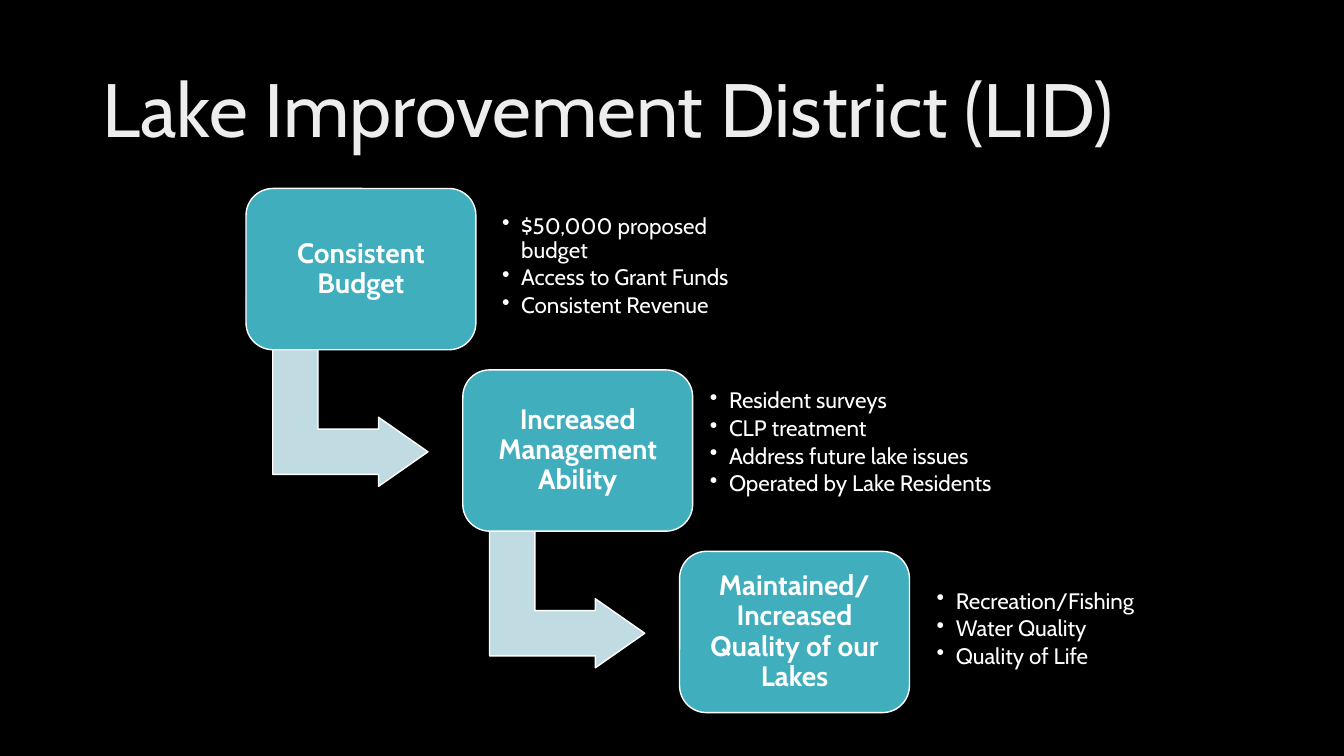
from pptx import Presentation
from pptx.dml.color import RGBColor
from pptx.enum.shapes import MSO_SHAPE
from pptx.enum.text import MSO_ANCHOR, PP_ALIGN
from pptx.oxml.ns import qn
from pptx.util import Inches, Pt
from lxml import etree

ROUNDED = MSO_SHAPE.ROUNDED_RECTANGLE
BENT_ARROW = MSO_SHAPE.BENT_UP_ARROW
MIDDLE = MSO_ANCHOR.MIDDLE
LEFT, CENTER = PP_ALIGN.LEFT, PP_ALIGN.CENTER

BLACK = RGBColor(0x00, 0x00, 0x00)
WHITE = RGBColor(0xFF, 0xFF, 0xFF)
TITLE_GRAY = RGBColor(0xED, 0xED, 0xED)
TEAL = RGBColor(0x41, 0xAE, 0xBD)
PALE_BLUE = RGBColor(0xC0, 0xDB, 0xE1)

FONT = "Cabin"
BULLET_INDENT = Inches(0.19)

FIRST_LEFT, FIRST_TOP = 2.44, 1.87
STEP_RIGHT, STEP_DOWN = 2.15, 1.8
STEP_WIDTH, STEP_HEIGHT = 2.28, 1.6

# Heading, details, and the details box as (left, top, width)
STEPS = [
    ("Consistent Budget",
     ["$50,000 proposed budget", "Access to Grant Funds", "Consistent Revenue"],
     (4.91, 2.0, 2.74)),
    ("Increased Management Ability",
     ["Resident surveys", "CLP treatment", "Address future lake issues",
      "Operated by Lake Residents"],
     (6.97, 3.75, 3.82)),
    ("Maintained/ Increased Quality of our Lakes",
     ["Recreation/Fishing", "Water Quality", "Quality of Life"],
     (9.22, 5.6, 2.74)),
]


def add_bullet(paragraph):
    properties = paragraph._p.get_or_add_pPr()
    properties.set("marL", str(BULLET_INDENT))
    properties.set("indent", str(-BULLET_INDENT))
    etree.SubElement(properties, qn("a:buChar")).set("char", "•")


def write_text(frame, lines, size, color=WHITE, bold=False, align=LEFT,
               bullets=False, space_after=0, margins=(0.1, 0.05)):
    frame.word_wrap = True
    frame.vertical_anchor = MIDDLE
    frame.margin_left = frame.margin_right = Inches(margins[0])
    frame.margin_top = frame.margin_bottom = Inches(margins[1])
    for index, line in enumerate(lines):
        paragraph = frame.add_paragraph() if index else frame.paragraphs[0]
        if bullets:
            add_bullet(paragraph)
        paragraph.alignment = align
        paragraph.line_spacing = 0.9
        paragraph.space_after = Pt(space_after)
        run = paragraph.add_run()
        run.text = line
        run.font.name = FONT
        run.font.size = Pt(size)
        run.font.bold = bold
        run.font.color.rgb = color


class StepSlide:
    def __init__(self, presentation):
        self.slide = presentation.slides.add_slide(presentation.slide_layouts[6])
        background = self.slide.background.fill
        background.solid()
        background.fore_color.rgb = BLACK

    def add_text(self, left, top, width, height, lines, **text_format):
        box = self.slide.shapes.add_textbox(
            Inches(left), Inches(top), Inches(width), Inches(height))
        write_text(box.text_frame, lines, **text_format)

    def add_shape(self, kind, left, top, width, height, color, adjustments):
        shape = self.slide.shapes.add_shape(
            kind, Inches(left), Inches(top), Inches(width), Inches(height))
        shape.shadow.inherit = False
        shape.fill.solid()
        shape.fill.fore_color.rgb = color
        shape.line.color.rgb = WHITE
        shape.line.width = Pt(1)
        for index, value in enumerate(adjustments):
            shape.adjustments[index] = value
        return shape

    def add_arrow(self, left, top):
        arrow = self.add_shape(BENT_ARROW, left, top, 1.37, 1.54, PALE_BLUE,
                               (0.328, 0.25, 0.358))
        arrow.rotation = 90

    def add_step(self, left, top, heading):
        step = self.add_shape(ROUNDED, left, top, STEP_WIDTH, STEP_HEIGHT, TEAL,
                              (0.167,))
        write_text(step.text_frame, [heading], size=20, bold=True,
                   align=CENTER, margins=(0.08, 0.08))

    def add_details(self, left, top, width, lines):
        self.add_text(left, top, width, 1.29, lines, size=16, bullets=True,
                      space_after=2.4, margins=(0.07, 0.07))


def main():
    presentation = Presentation()
    presentation.slide_width = Inches(13.33)
    presentation.slide_height = Inches(7.5)

    page = StepSlide(presentation)
    page.add_text(0.92, 0.4, 11.5, 1.45, ["Lake Improvement District (LID)"],
                  size=54, color=TITLE_GRAY)
    for index, (heading, details, details_place) in enumerate(STEPS):
        left = FIRST_LEFT + index * STEP_RIGHT
        top = FIRST_TOP + index * STEP_DOWN
        if index < len(STEPS) - 1:
            page.add_arrow(left + 0.35, top + 1.5)
        page.add_step(left, top, heading)
        page.add_details(*details_place, details)

    presentation.save("out.pptx")


if __name__ == "__main__":
    main()
